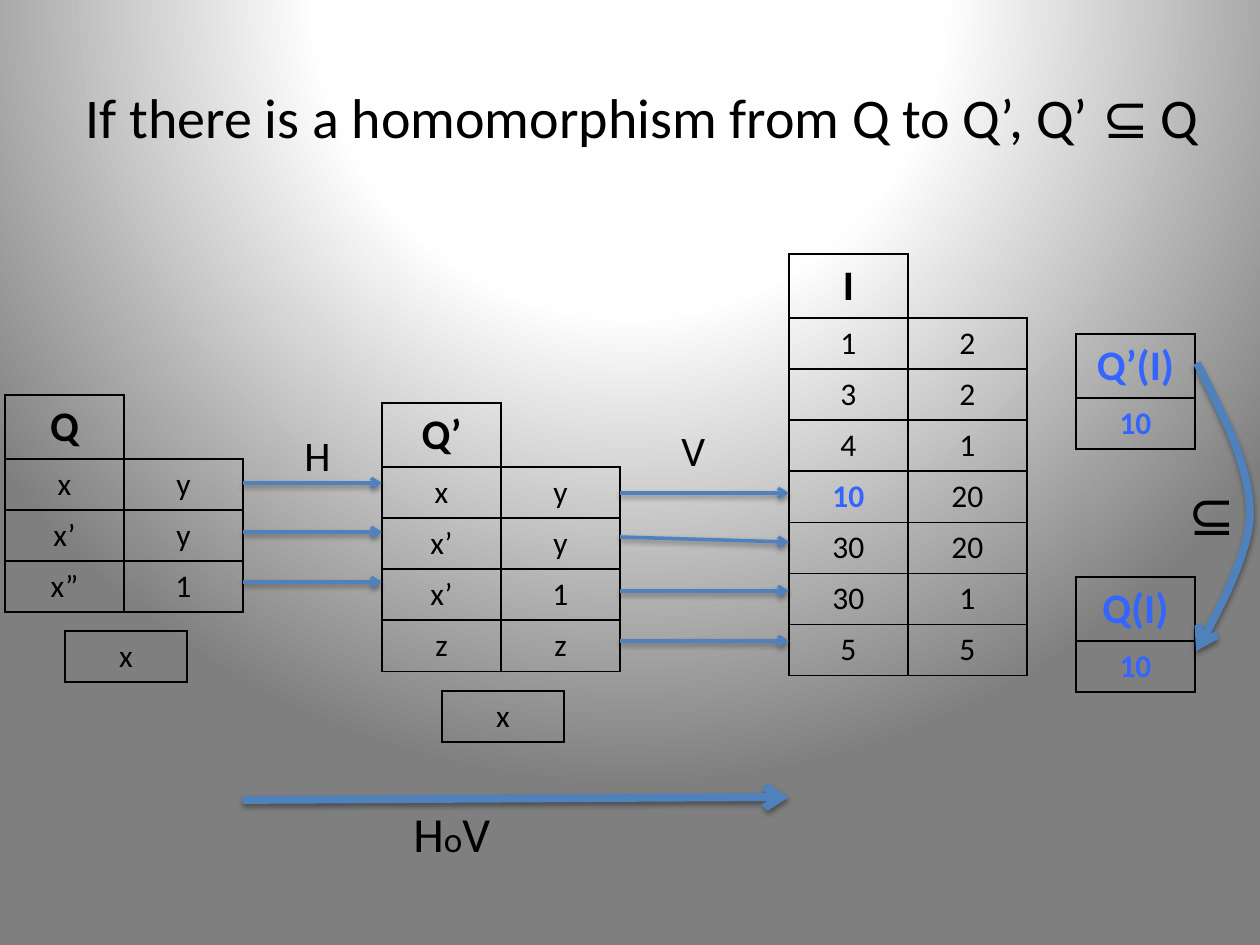
from lxml import etree
from pptx import Presentation
from pptx.dml.color import RGBColor
from pptx.enum.shapes import MSO_CONNECTOR
from pptx.enum.text import MSO_ANCHOR, MSO_AUTO_SIZE, PP_ALIGN
from pptx.oxml import parse_xml
from pptx.oxml.ns import nsdecls, qn
from pptx.util import Inches, Pt

PX = Inches(1) / 126
BLACK = RGBColor(0x00, 0x00, 0x00)
BLUE = RGBColor(0x33, 0x66, 0xFF)
ARROW = RGBColor(0x4F, 0x81, 0xBD)
COL_W, ROW_H = 119, 51
NO_STYLE = "{2D5ABB26-0587-4C30-8999-92F81FD0307C}"


def px(*lengths):
    return [round(n * PX) for n in lengths]


def style_arrow(shape, width):
    """Blue line with an open arrowhead at its end and a soft shadow."""
    shape.line.color.rgb = ARROW
    shape.line.width = Pt(width)
    etree.SubElement(shape.line._get_or_add_ln(), qn("a:tailEnd"), type="arrow")
    shape._element.spPr.append(parse_xml(
        f'<a:effectLst {nsdecls("a")}><a:outerShdw blurRad="40000" dist="20000" '
        'dir="5400000" rotWithShape="0"><a:srgbClr val="000000">'
        '<a:alpha val="38000"/></a:srgbClr></a:outerShdw></a:effectLst>'))


prs = Presentation()
prs.slide_width, prs.slide_height = px(1260, 945)
s = prs.slides.add_slide(prs.slide_layouts[5])

# Background: radial gradient centred above the slide
s.background.fill.solid()
bg = s.background._cSld.bg.bgPr
bg.replace(bg[0], parse_xml(
    f'<a:gradFill {nsdecls("a")} rotWithShape="1"><a:gsLst>'
    '<a:gs pos="0"><a:srgbClr val="FFFFFF"/></a:gs>'
    '<a:gs pos="40000"><a:srgbClr val="FEFEFE"/></a:gs>'
    '<a:gs pos="100000"><a:srgbClr val="7F7F7F"/></a:gs></a:gsLst>'
    '<a:path path="circle"><a:fillToRect l="50000" t="-80000" r="50000" b="180000"/>'
    '</a:path></a:gradFill>'))

# Title
title = s.shapes.title
title.left, title.top, title.width, title.height = px(63, 38, 1172, 157)
tf = title.text_frame
tf.text = "If there is a homomorphism from Q to Q’, Q’ ⊆ Q "
tf.vertical_anchor = MSO_ANCHOR.MIDDLE
p = tf.paragraphs[0]
p.alignment = PP_ALIGN.CENTER
p.font.size, p.font.name, p.font.color.rgb = Pt(32), "Calibri", BLACK

# Tables: left, top, column width, heading, rows, blue texts
tables = [
    (5, 395, COL_W, "Q", ["x y", "x’ y", "x” 1"], []),
    (382, 403, COL_W, "Q’", ["x y", "x’ y", "x’ 1", "z z"], []),
    (789, 254, COL_W, "I", ["1 2", "3 2", "4 1", "10 20", "30 20", "30 1", "5 5"], ["10"]),
    (1076, 334, COL_W, "Q’(I)", ["10"], ["Q’(I)", "10"]),
    (1076, 577, COL_W, "Q(I)", ["10"], ["Q(I)", "10"]),
    (65, 631, 122, None, ["x"], []),
    (442, 691, 122, None, ["x"], []),
]
for left, top, col_w, heading, rows, blue in tables:
    grid = [row.split() for row in rows]
    cols = len(grid[0])
    if heading:
        grid.insert(0, [heading] + [""] * (cols - 1))
    frame = s.shapes.add_table(len(grid), cols,
                               *px(left, top, col_w * cols, ROW_H * len(grid)))
    table = frame.table
    table.first_row = table.horz_banding = False
    table._tbl.tblPr.find(qn("a:tableStyleId")).text = NO_STYLE
    for i, row in enumerate(grid):
        for j, text in enumerate(row):
            cell = table.cell(i, j)
            for side in "LRTB" if text else "LB":
                cell._tc.get_or_add_tcPr().append(parse_xml(
                    f'<a:ln{side} {nsdecls("a")} w="12700"><a:solidFill>'
                    f'<a:srgbClr val="000000"/></a:solidFill></a:ln{side}>'))
            cell.fill.background()
            if not text:
                continue
            cell.text = text
            p = cell.text_frame.paragraphs[0]
            p.alignment = PP_ALIGN.CENTER
            p.font.name = "Calibri"
            p.font.size = Pt(24 if text == heading else 18)
            p.font.bold = text == heading or text in blue
            p.font.color.rgb = BLUE if text in blue else BLACK

# Straight arrows: H, V and the composed mapping
arrows = [(243, y, 382, y, 2) for y in (483, 532, 582)]
arrows += [(620, y1, 789, y2, 2)
           for y1, y2 in ((493, 493), (537, 542), (591, 591), (641, 641))]
arrows.append((243, 800, 789, 797, 4.5))
for x1, y1, x2, y2, width in arrows:
    line = s.shapes.add_connector(MSO_CONNECTOR.STRAIGHT, *px(x1, y1, x2, y2))
    style_arrow(line, width)

# Curved arrow from Q’(I) to Q(I), two Bézier pieces
curves = [((1197, 363), (1223, 415), (1250, 466), (1250, 514)),
          ((1250, 514), (1250, 562), (1196, 651), (1196, 651))]
STEPS = 16
points = [px(*curves[0][0])]
for a, b, c, d in curves:
    for k in range(1, STEPS + 1):
        t = k / STEPS
        u = 1 - t
        points.append(px(*(u**3 * a[n] + 3 * u * u * t * b[n] + 3 * u * t * t * c[n]
                           + t**3 * d[n] for n in (0, 1))))
builder = s.shapes.build_freeform(*points[0])
builder.add_line_segments(points[1:], close=False)
curve = builder.convert_to_shape()
curve.fill.background()
style_arrow(curve, 4.5)

# Labels: box, runs with sizes
labels = [
    ((292, 423, 52, 63), [("H", 24)]),
    ((669, 418, 50, 63), [("V", 24)]),
    ((401, 797, 103, 72), [("H", 28), ("o", 20), ("V", 28)]),
    ((1176, 473, 82, 81), [("⊆", 32)]),
]
for box, runs in labels:
    tf = s.shapes.add_textbox(*px(*box)).text_frame
    tf.word_wrap = False
    tf.auto_size = MSO_AUTO_SIZE.SHAPE_TO_FIT_TEXT
    p = tf.paragraphs[0]
    p.font.name, p.font.color.rgb = "Calibri", BLACK
    for text, size in runs:
        r = p.add_run()
        r.text, r.font.size = text, Pt(size)

prs.save("out.pptx")
